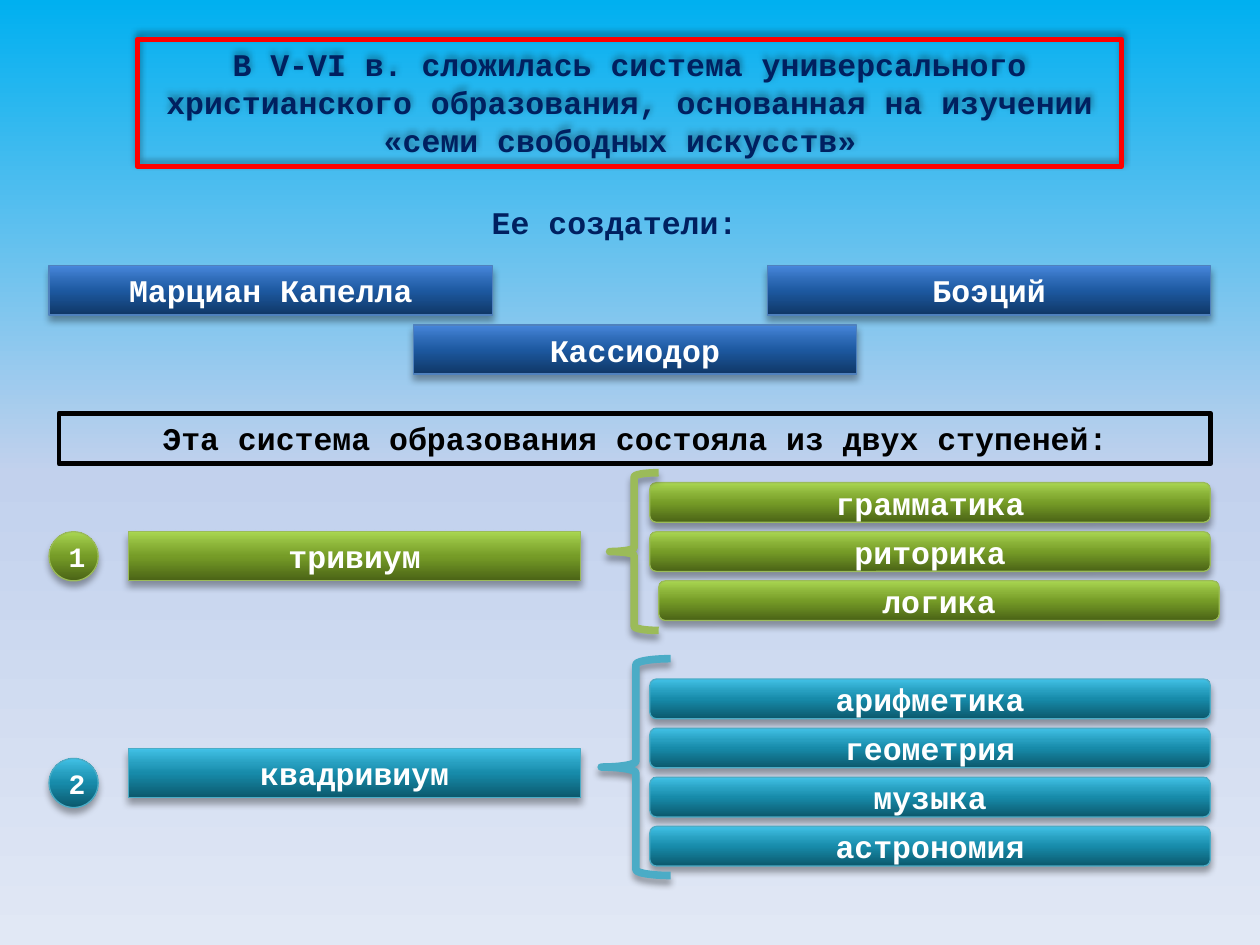
from lxml import etree
from pptx import Presentation
from pptx.dml.color import RGBColor
from pptx.enum.shapes import MSO_SHAPE
from pptx.enum.text import MSO_ANCHOR, MSO_AUTO_SIZE, PP_ALIGN
from pptx.oxml.ns import qn
from pptx.util import Cm, Pt

RECT = MSO_SHAPE.RECTANGLE
ROUND = MSO_SHAPE.ROUNDED_RECTANGLE
OVAL = MSO_SHAPE.OVAL
BRACE = MSO_SHAPE.LEFT_BRACE
TOP, MIDDLE = MSO_ANCHOR.TOP, MSO_ANCHOR.MIDDLE
FIT = MSO_AUTO_SIZE.SHAPE_TO_FIT_TEXT
CENTER = PP_ALIGN.CENTER

FONT = "Courier New"
NAVY = "002060"
STOPS = (0, 50, 70, 100)
BLUE = ("4F81BD", ("0F3766", "1D59A1", "2D6AB6", "4786DB"))
GREEN = ("9BBB59", ("4A6316", "769C27", "89B137", "A9D651"))
TEAL = ("4BACC6", ("0B586C", "178BAA", "279FC0", "41C1E6"))
SKY = ("00B0F0", "C2D1ED", "E1E8F5")

ROW = 0.99


def color(code):
    return RGBColor.from_string(code)


def shade(fill, root, stops, codes, angle):
    fill.gradient()
    fill.gradient_angle = angle
    items = root.find(".//" + qn("a:gsLst"))
    for old in list(items):
        items.remove(old)
    for stop, code in zip(stops, codes):
        item = etree.SubElement(items, qn("a:gs"), pos=str(stop * 1000))
        etree.SubElement(item, qn("a:srgbClr"), val=code)


def cast(shape, alpha, angle):
    effects = shape.element.spPr.find(qn("a:effectLst"))
    outer = etree.SubElement(
        effects, qn("a:outerShdw"), blurRad=str(Pt(4)), dist=str(Pt(3)),
        dir=str(angle * 60000), rotWithShape="0")
    tint = etree.SubElement(outer, qn("a:srgbClr"), val="000000")
    etree.SubElement(tint, qn("a:alpha"), val=str(alpha * 1000))


def write(shape, text, code, size=18, anchor=MIDDLE):
    frame = shape.text_frame
    frame.word_wrap = True
    frame.vertical_anchor = anchor
    frame.text = text
    para = frame.paragraphs[0]
    para.alignment = CENTER
    font = para.runs[0].font
    font.name, font.size, font.bold = FONT, Pt(size), True
    font.color.rgb = color(code)


def outline(slide, kind, box, code, width):
    shape = slide.shapes.add_shape(kind, *map(Cm, box))
    shape.shadow.inherit = False
    shape.fill.background()
    shape.line.color.rgb = color(code)
    shape.line.width = Pt(width)
    return shape


def frame(slide, text, box, edge, ink):
    shape = outline(slide, RECT, box, edge, 2.75)
    write(shape, text, ink, anchor=TOP)
    shape.text_frame.auto_size = FIT
    return shape


def label(slide, text, box, ink):
    shape = slide.shapes.add_textbox(*map(Cm, box))
    write(shape, text, ink, anchor=TOP)
    shape.text_frame.auto_size = FIT


def plate(slide, kind, text, box, theme, size=18):
    edge, codes = theme
    shape = outline(slide, kind, box, edge, 0.75)
    shade(shape.fill, shape.element, STOPS, codes, 90)
    cast(shape, 35, 90)
    write(shape, text, "FFFFFF", size)


def stage(slide, mark, name, arts, theme, tops, brace):
    mark_top, name_top, arts_top = tops
    plate(slide, RECT, name, (2.59, name_top, 9.12, ROW), theme)
    for i, art in enumerate(arts):
        left = 13.28 if art == "логика" else 13.1
        plate(slide, ROUND, art, (left, arts_top + i * ROW, 11.3, 0.8), theme)
    plate(slide, OVAL, mark, (0.99, mark_top, ROW, ROW), theme, 16)
    cast(outline(slide, BRACE, brace, theme[0], 4.33), 35, 90)


def main():
    deck = Presentation()
    deck.slide_width, deck.slide_height = Cm(25.4), Cm(19.05)
    slide = deck.slides.add_slide(deck.slide_layouts[6])
    shade(slide.background.fill, slide.element, (0, 50, 100), SKY, 270)

    title = frame(
        slide,
        "В V-VI в. сложилась система универсального христианского "
        "образования, основанная на изучении «семи свободных искусств» ",
        (2.77, 0.79, 19.84, 2.57), "FF0000", NAVY)
    cast(title, 40, 270)
    label(slide, "Ее создатели:", (6.93, 3.96, 10.92, 1.02), NAVY)
    for name, left, top in (("Марциан Капелла", 0.99, 5.36),
                            ("Боэций", 15.47, 5.36),
                            (" Кассиодор ", 8.33, 6.55)):
        plate(slide, RECT, name, (left, top, 8.94, ROW), BLUE)

    frame(slide, "Эта система образования состояла из двух ступеней:",
          (1.19, 8.33, 23.22, 1.02), "000000", "000000")
    stage(slide, "1", " тривиум ", ("грамматика", "риторика", "логика"),
          GREEN, (10.72, 10.72, 9.73), (12.29, 9.53, 0.99, 3.18))
    stage(slide, "2", "квадривиум",
          ("арифметика", "геометрия", "музыка", "астрономия"),
          TEAL, (15.29, 15.09, 13.69), (12.12, 13.28, 1.4, 4.37))
    deck.save("out.pptx")


if __name__ == "__main__":
    main()
